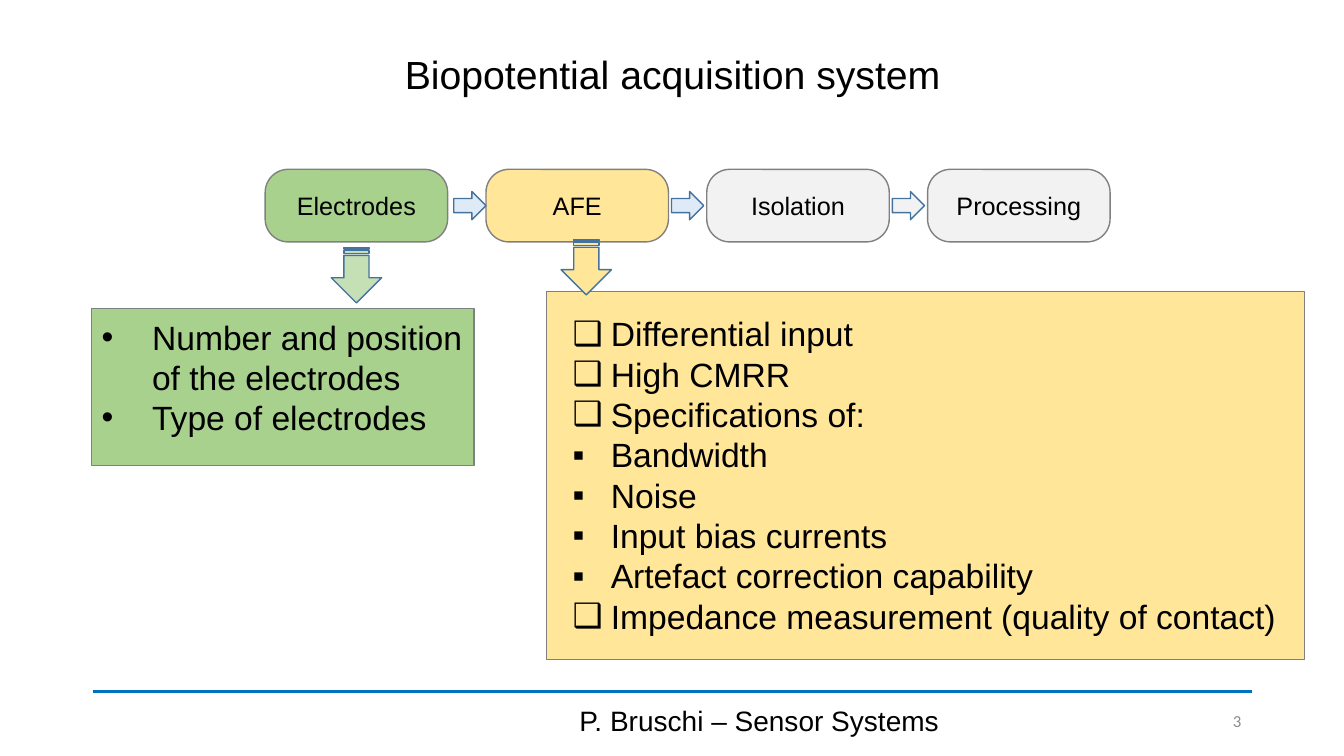
from lxml.etree import SubElement
from pptx import Presentation
from pptx.dml.color import RGBColor
from pptx.enum.shapes import MSO_CONNECTOR, MSO_SHAPE
from pptx.enum.text import MSO_ANCHOR, PP_ALIGN
from pptx.oxml.ns import qn
from pptx.util import Inches, Pt

COLORS = {
    "black": "000000", "number": "8C8C8C", "rule": "0070C0",
    "border": "808080", "arrow_line": "43739E",
    "green": "A9D18E", "light_green": "C5E0B4", "yellow": "FFE699",
    "gray": "F2F2F2", "light_blue": "DEEBF7",
}


def color(name):
    return RGBColor.from_string(COLORS[name])


def format_para(para, size, align=PP_ALIGN.LEFT, font="Arial", ink="black"):
    para.alignment = align
    for span in para.runs:
        span.font.size = Pt(size)
        span.font.name = font
        span.font.color.rgb = color(ink)


def add_block(page, kind, frame, fill, line="border"):
    block = page.shapes.add_shape(kind, *map(Inches, frame))
    block.shadow.inherit = False
    block.fill.solid()
    block.fill.fore_color.rgb = color(fill)
    block.line.color.rgb = color(line)
    block.line.width = Pt(1)
    return block


def add_stage(page, left, label, fill):
    stage = add_block(page, MSO_SHAPE.ROUNDED_RECTANGLE, (left, 1.68, 1.81, 0.72), fill)
    stage.adjustments[0] = 0.317
    stage.text_frame.text = label
    stage.text_frame.vertical_anchor = MSO_ANCHOR.MIDDLE
    format_para(stage.text_frame.paragraphs[0], 18, PP_ALIGN.CENTER)


def add_down_arrow(page, left, top, fill):
    arrow = add_block(page, MSO_SHAPE.STRIPED_RIGHT_ARROW, (left, top, 0.55, 0.5),
                      fill, "arrow_line")
    arrow.rotation = 90


def add_text_box(page, frame):
    box = page.shapes.add_textbox(*map(Inches, frame))
    box.text_frame.word_wrap = True
    return box


def add_label(page, frame, text, size, align, font="Arial", ink="black"):
    box = add_text_box(page, frame)
    box.text_frame.text = text
    box.text_frame.vertical_anchor = MSO_ANCHOR.MIDDLE
    para = box.text_frame.paragraphs[0]
    format_para(para, size, align, font, ink)
    return para


def add_bullets(page, frame, items, indent):
    box = add_text_box(page, frame)
    box.text_frame.text = "\n".join(text for _, text in items)
    for para, (mark, _) in zip(box.text_frame.paragraphs, items):
        format_para(para, 24)
        properties = para._p.get_or_add_pPr()
        properties.set("marL", str(Inches(indent)))
        properties.set("indent", str(-Inches(indent)))
        SubElement(properties, qn("a:buFont")).set("typeface", "Arial")
        SubElement(properties, qn("a:buChar")).set("char", mark)


def add_rule(page):
    rule = page.shapes.add_connector(MSO_CONNECTOR.STRAIGHT, Inches(0.92), Inches(6.86),
                                     Inches(12.42), Inches(6.86))
    rule.line.color.rgb = color("rule")
    rule.line.width = Pt(2.75)
    SubElement(rule._element.spPr, qn("a:effectLst"))


def main():
    deck = Presentation()
    deck.slide_width, deck.slide_height = Inches(13.33), Inches(7.5)
    page = deck.slides.add_slide(deck.slide_layouts[6])

    # Footer rule and coloured panels
    add_rule(page)
    add_block(page, MSO_SHAPE.RECTANGLE, (0.91, 3.06, 3.79, 1.56), "green")
    add_block(page, MSO_SHAPE.RECTANGLE, (5.42, 2.89, 7.52, 3.65), "yellow")

    # Title and footer
    title = add_label(page, (0.92, 0.4, 11.5, 0.72), "Biopotential acquisition system",
                      28, PP_ALIGN.CENTER)
    title.line_spacing = 0.9
    add_label(page, (4.42, 6.95, 6.22, 0.4), "P. Bruschi – Sensor Systems",
              20, PP_ALIGN.CENTER)
    add_label(page, (11.45, 6.95, 0.96, 0.4), "3", 12, PP_ALIGN.RIGHT, "Calibri", "number")

    # Signal chain
    stages = [("Electrodes", "green"), ("AFE", "yellow"),
              ("Isolation", "gray"), ("Processing", "gray")]
    for index, (label, fill) in enumerate(stages):
        add_stage(page, 2.63 + 2.19 * index, label, fill)
    for left, fill in [(4.5, "light_blue"), (6.66, "light_blue"), (8.85, "gray")]:
        add_block(page, MSO_SHAPE.RIGHT_ARROW, (left, 1.9, 0.32, 0.28), fill, "arrow_line")

    # Details of electrodes and AFE
    add_bullets(page, (0.91, 3.09, 3.9, 1.31), [
        ("•", "Number and position of the electrodes"),
        ("•", "Type of electrodes"),
    ], 0.5)
    add_bullets(page, (5.58, 3.06, 7.35, 3.33), [
        ("❑", "Differential input"),
        ("❑", "High CMRR"),
        ("❑", "Specifications of:"),
        ("▪", "Bandwidth"),
        ("▪", "Noise"),
        ("▪", "Input bias currents"),
        ("▪", "Artefact correction capability"),
        ("❑", "Impedance measurement (quality of contact)"),
    ], 0.38)

    # Arrows from the chain to the details
    add_down_arrow(page, 3.26, 2.48, "light_green")
    add_down_arrow(page, 5.54, 2.4, "yellow")

    deck.save("out.pptx")


if __name__ == "__main__":
    main()
